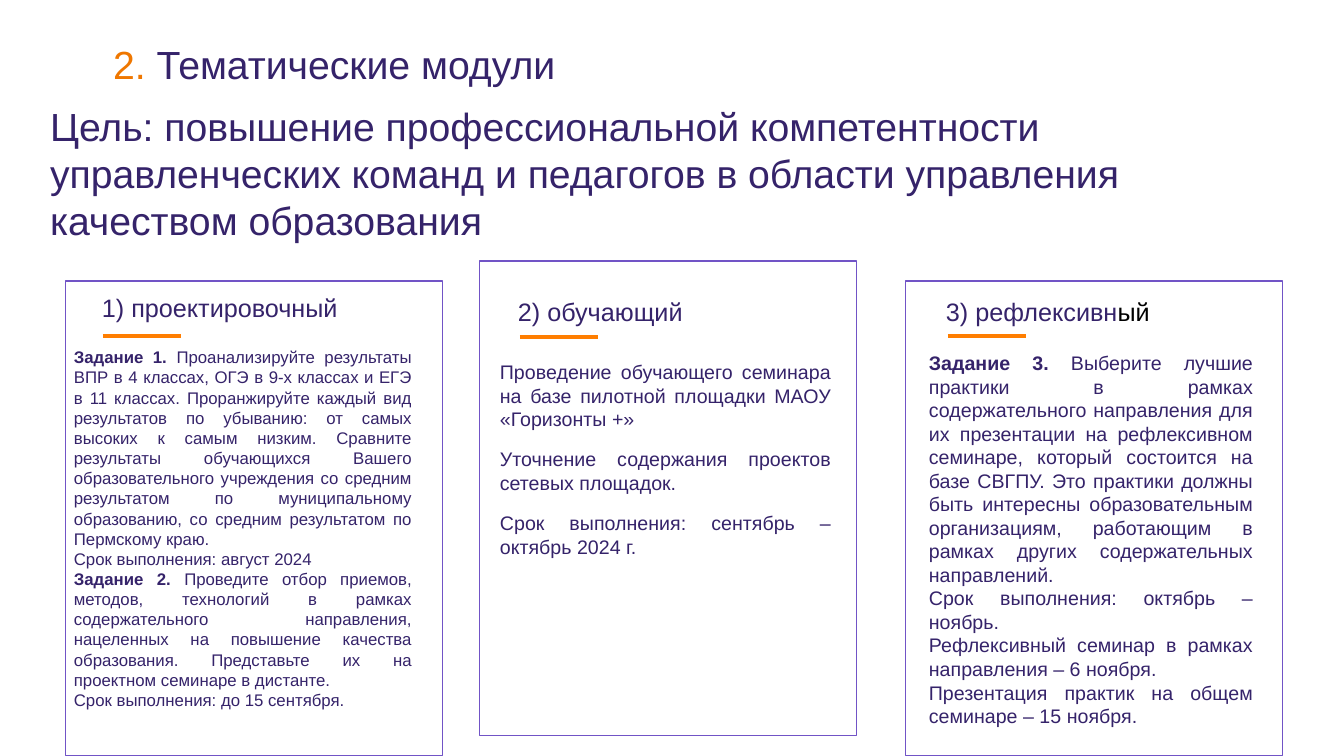
"""Builds a slide with the aim of a programme and its three thematic modules."""
from dataclasses import dataclass

from lxml import etree
from pptx import Presentation
from pptx.dml.color import RGBColor
from pptx.enum.shapes import MSO_CONNECTOR, MSO_SHAPE
from pptx.enum.text import MSO_ANCHOR, MSO_AUTO_SIZE, PP_ALIGN
from pptx.oxml.ns import qn
from pptx.util import Emu, Pt

LEFT, JUSTIFY = PP_ALIGN.LEFT, PP_ALIGN.JUSTIFY
TOP, BOTTOM = MSO_ANCHOR.TOP, MSO_ANCHOR.BOTTOM
NO_FIT = MSO_AUTO_SIZE.NONE
RECTANGLE, STRAIGHT = MSO_SHAPE.RECTANGLE, MSO_CONNECTOR.STRAIGHT


@dataclass(frozen=True)
class Theme:
    font: str = "Arial"
    ink: str = "35236A"
    number: str = "EF7700"
    accent: str = "FF7E00"
    frame: str = "7154C6"
    black: str = "000000"
    title: int = 28
    heading: int = 18
    body: int = 14
    small: int = 12


THEME = Theme()
SLIDE_WIDTH, SLIDE_HEIGHT = 1344, 756
EMU_PER_PX = 12192000 / SLIDE_WIDTH
CARD_WIDTH, CARD_HEIGHT = 377, 475
RULE_WIDTH, HEADING_HEIGHT = 78, 40
BODY_INDENT = 2

TITLE = [[("2. ", {"color": THEME.number}), ("Тематические модули", {})]]
TITLE_AREA = (103, 46, 629, 47)
GOAL = [[("Цель: повышение профессиональной компетентности управленческих команд "
          "и педагогов в области управления качеством образования", {})]]
GOAL_AREA = (40, 97, 1223, 152)
BOLD = {"bold": True}

MODULES = [
    {
        "card": (66, 281), "rule": (103, 336), "heading_at": (92, 287, 283),
        "heading": [("1) проектировочный", {})],
        "body_area": (62, 342, 360, 458), "size": THEME.small, "gap": 0,
        "body": [
            [("Задание 1. ", BOLD),
             ("Проанализируйте результаты ВПР в 4 классах, ОГЭ в 9-х классах и ЕГЭ "
              "в 11 классах. Проранжируйте каждый вид результатов по убыванию: от самых "
              "высоких к самым низким. Сравните результаты обучающихся Вашего "
              "образовательного учреждения со средним результатом по муниципальному "
              "образованию, со средним результатом по Пермскому краю.", {})],
            [("Срок выполнения: август 2024", {})],
            [("Задание 2. ", BOLD),
             ("Проведите отбор приемов, методов, технологий в рамках содержательного "
              "направления, нацеленных на повышение качества образования. Представьте "
              "их на проектном семинаре в дистанте.", {})],
            [("Срок выполнения: до 15 сентября.", {})],
        ],
    },
    {
        "card": (480, 261), "rule": (520, 337), "heading_at": (508, 291, 244),
        "heading": [("2) обучающий", {})],
        "body_area": (488, 355, 353, 251), "size": THEME.body, "gap": 6,
        "body": [
            [("Проведение обучающего семинара на базе пилотной площадки "
              "МАОУ «Горизонты +»", {})],
            [("Уточнение содержания проектов сетевых площадок.", {})],
            [("Срок выполнения: сентябрь – октябрь 2024 г.", {})],
        ],
    },
    {
        "card": (906, 281), "rule": (948, 336), "heading_at": (936, 291, 317),
        "heading": [("3) рефлексивн", {}), ("ый", {"color": THEME.black})],
        "body_area": (917, 346, 346, 437), "size": THEME.body, "gap": 0,
        "body": [
            [("Задание 3.", BOLD),
             (" Выберите лучшие практики в рамках содержательного направления для их "
              "презентации на рефлексивном семинаре, который состоится на базе СВГПУ. "
              "Это практики должны быть интересны образовательным организациям, "
              "работающим в рамках других содержательных направлений.", {})],
            [("Срок выполнения: октябрь –ноябрь.", {})],
            [("Рефлексивный семинар в рамках направления – 6 ноября.", {})],
            [("Презентация практик на общем семинаре – 15 ноября.", {})],
        ],
    },
]


def px(*lengths):
    return [Emu(round(length * EMU_PER_PX)) for length in lengths]


def place(box, area):
    box.left, box.top, box.width, box.height = px(*area)


def write(box, paragraphs, size, align=LEFT, anchor=TOP, indent=0, gap=0, spacing=1.0):
    frame = box.text_frame
    frame.word_wrap = True
    frame.auto_size = NO_FIT
    frame.vertical_anchor = anchor
    for index, spans in enumerate(paragraphs):
        para = frame.add_paragraph() if index else frame.paragraphs[0]
        para.alignment = align
        para.line_spacing = spacing
        para.space_before = para.space_after = Pt(gap)
        properties = para._p.get_or_add_pPr()
        properties.set("marL", str(px(indent)[0]))
        properties.set("indent", "0")
        etree.SubElement(properties, qn("a:buNone"))
        for text, style in spans:
            span = para.add_run()
            span.text = text
            span.font.name = THEME.font
            span.font.size = Pt(size)
            span.font.bold = style.get("bold", False)
            span.font.color.rgb = RGBColor.from_string(style.get("color", THEME.ink))


def add_text(page, area, paragraphs, size, **layout):
    write(page.shapes.add_textbox(*px(*area)), paragraphs, size, **layout)


def set_line(line, color, width):
    line.color.rgb = RGBColor.from_string(color)
    line.width = Pt(width)


def add_module(page, module):
    card = page.shapes.add_shape(RECTANGLE, *px(*module["card"], CARD_WIDTH, CARD_HEIGHT))
    card.shadow.inherit = False
    card.fill.background()
    set_line(card.line, THEME.frame, 0.75)
    left, top = module["rule"]
    rule = page.shapes.add_connector(STRAIGHT, *px(left, top, left + RULE_WIDTH, top))
    set_line(rule.line, THEME.accent, 2.25)
    etree.SubElement(rule._element.spPr, qn("a:effectLst"))
    add_text(page, (*module["heading_at"], HEADING_HEIGHT), [module["heading"]], THEME.heading)
    add_text(page, module["body_area"], module["body"], module["size"],
             align=JUSTIFY, indent=BODY_INDENT, gap=module["gap"])


def main():
    deck = Presentation()
    deck.slide_width, deck.slide_height = px(SLIDE_WIDTH, SLIDE_HEIGHT)
    page = deck.slides.add_slide(deck.slide_layouts[1])
    title, goal = page.placeholders
    place(title, TITLE_AREA)
    write(title, TITLE, THEME.title, anchor=BOTTOM, spacing=0.9)
    place(goal, GOAL_AREA)
    write(goal, GOAL, THEME.title)
    for module in MODULES:
        add_module(page, module)
    deck.save("out.pptx")


if __name__ == "__main__":
    main()
